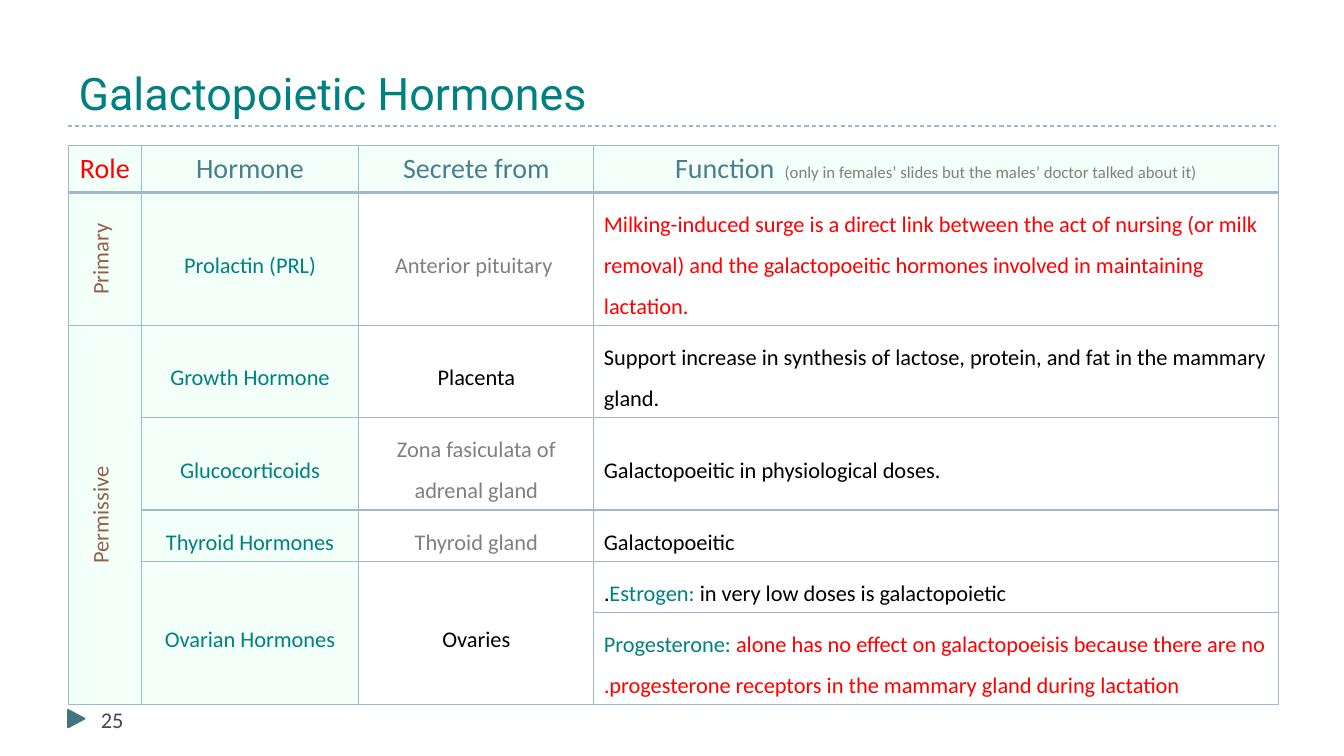
"""Build the slide on galactopoietic hormones: a title, a rule and a table."""
from dataclasses import dataclass
from typing import NamedTuple

from lxml import etree
from pptx import Presentation
from pptx.dml.color import RGBColor
from pptx.enum.dml import MSO_LINE
from pptx.enum.shapes import MSO_CONNECTOR, MSO_SHAPE
from pptx.enum.text import MSO_ANCHOR, PP_ALIGN
from pptx.oxml.ns import qn
from pptx.util import Emu, Inches, Pt

DASH = MSO_LINE.DASH
STRAIGHT = MSO_CONNECTOR.STRAIGHT
TRIANGLE = MSO_SHAPE.ISOSCELES_TRIANGLE
TOP, MIDDLE, BOTTOM = MSO_ANCHOR.TOP, MSO_ANCHOR.MIDDLE, MSO_ANCHOR.BOTTOM
LEFT, CENTER = PP_ALIGN.LEFT, PP_ALIGN.CENTER

TEAL = RGBColor(0x00, 0x80, 0x80)
RED = RGBColor(0xFF, 0x00, 0x00)
BLACK = RGBColor(0x00, 0x00, 0x00)
GRAY = RGBColor(0x80, 0x80, 0x80)
BROWN = RGBColor(0x95, 0x5E, 0x4B)
HEADING = RGBColor(0x49, 0x7E, 0x8D)
SLATE = RGBColor(0x46, 0x46, 0x53)
MARKER = RGBColor(0x42, 0x73, 0x80)
RULE = RGBColor(0x9F, 0xB8, 0xCD)
MINT = RGBColor(0xF3, 0xFF, 0xF9)
WHITE = RGBColor(0xFF, 0xFF, 0xFF)

BODY_FONT, TITLE_FONT = "Calibri", "Roboto"
SLIDE_WIDTH, SLIDE_HEIGHT = Inches(13.33), Inches(7.5)
GRID_COLUMNS, GRID_ROWS = 1333, 750
COLUMN_SPANS = (72, 216, 233, 679)
ROW_SPANS = (47, 132, 91, 92, 51, 51, 91)


class Box(NamedTuple):
    """A place on the slide, in grid columns and rows."""
    left: float
    top: float
    width: float
    height: float


class Span(NamedTuple):
    """A stretch of text in one colour; size 0 keeps the paragraph's size."""
    text: str
    color: RGBColor
    size: int = 0


@dataclass(frozen=True)
class Entry:
    """A table cell with its text, place and reach."""
    row: int
    column: int
    spans: tuple[Span, ...]
    rows: int = 1
    right_to_left: bool = False


ENTRIES = (
    Entry(0, 0, (Span("Role", RED),)),
    Entry(0, 1, (Span("Hormone", HEADING),)),
    Entry(0, 2, (Span("Secrete from", HEADING),)),
    Entry(0, 3, (Span("Function ", HEADING), Span(
        " (only in females’ slides but the males’ doctor talked about it)", GRAY, 12))),
    Entry(1, 0, (Span("Primary", BROWN),)),
    Entry(1, 1, (Span("Prolactin (PRL)", TEAL),)),
    Entry(1, 2, (Span("Anterior pituitary ", GRAY),)),
    Entry(1, 3, (Span(
        "Milking-induced surge is a direct link between the act of nursing (or milk removal) "
        "and the galactopoeitic hormones involved in maintaining lactation.", RED),)),
    Entry(2, 0, (Span("Permissive", BROWN),), rows=5),
    Entry(2, 1, (Span("Growth Hormone", TEAL),)),
    Entry(2, 2, (Span("Placenta", BLACK),)),
    Entry(2, 3, (Span("Support increase in synthesis of lactose, protein, and fat "
                      "in the mammary gland.", BLACK),)),
    Entry(3, 1, (Span("Glucocorticoids", TEAL),)),
    Entry(3, 2, (Span("Zona fasiculata of adrenal gland", GRAY),)),
    Entry(3, 3, (Span("Galactopoeitic in physiological doses.", BLACK),)),
    Entry(4, 1, (Span("Thyroid Hormones", TEAL),), right_to_left=True),
    Entry(4, 2, (Span("Thyroid gland", GRAY),)),
    Entry(4, 3, (Span("Galactopoeitic", BLACK),), right_to_left=True),
    Entry(5, 1, (Span("Ovarian Hormones", TEAL),), rows=2, right_to_left=True),
    Entry(5, 2, (Span("Ovaries", BLACK),), rows=2),
    Entry(5, 3, (Span("Estrogen:", TEAL), Span(" in very low doses is galactopoietic.", BLACK)),
          right_to_left=True),
    Entry(6, 3, (Span("Progesterone: ", TEAL), Span(
        "alone has no effect on galactopoeisis because there are no progesterone receptors "
        "in the mammary gland during lactation.", RED)), right_to_left=True),
)


def across(columns: float) -> Emu:
    """Turn grid columns into a length."""
    return Emu(round(SLIDE_WIDTH * columns / GRID_COLUMNS))


def down(rows: float) -> Emu:
    """Turn grid rows into a length."""
    return Emu(round(SLIDE_HEIGHT * rows / GRID_ROWS))


def place(box: Box) -> tuple[Emu, Emu, Emu, Emu]:
    """Turn a box into left, top, width and height."""
    return across(box.left), down(box.top), across(box.width), down(box.height)


def add_label(page, box: Box, text: str, font: str, size: int, color: RGBColor, anchor) -> None:
    """Write one line of text on the slide."""
    frame = page.shapes.add_textbox(*place(box)).text_frame
    frame.word_wrap = True
    frame.vertical_anchor = anchor
    frame.margin_left = frame.margin_right = across(11)
    frame.margin_top = frame.margin_bottom = down(6)
    para = frame.paragraphs[0]
    para.text = text
    para.font.name, para.font.size, para.font.color.rgb = font, Pt(size), color


def add_rule(page, left: float, right: float, top: float) -> None:
    """Draw the dashed rule under the title."""
    rule = page.shapes.add_connector(STRAIGHT, across(left), down(top), across(right), down(top))
    rule.line.color.rgb, rule.line.width, rule.line.dash_style = RULE, Pt(0.75), DASH
    etree.SubElement(rule._element.spPr, qn("a:effectLst"))


def add_marker(page, box: Box) -> None:
    """Draw the triangle beside the page number."""
    marker = page.shapes.add_shape(TRIANGLE, *place(box))
    marker.rotation = 90
    marker.shadow.inherit = False
    marker.fill.solid()
    marker.fill.fore_color.rgb = marker.line.color.rgb = MARKER
    marker.line.width = Pt(1.5)


def style_cell(cell, row: int, column: int) -> None:
    """Give a cell its fill and borders."""
    cell.fill.solid()
    cell.fill.fore_color.rgb = MINT if row == 0 or column < 2 else WHITE
    properties = cell._tc.get_or_add_tcPr()
    for index, side in enumerate(("lnL", "lnR", "lnT", "lnB")):
        width = Pt(2) if row == 0 and side == "lnB" else Pt(1)
        border = etree.Element(qn(f"a:{side}"), w=str(int(width)))
        fill = etree.SubElement(border, qn("a:solidFill"))
        etree.SubElement(fill, qn("a:srgbClr"), val=str(RULE))
        properties.insert(index, border)


def write_entry(table, entry: Entry) -> None:
    """Write an entry into its cell, merging rows where it reaches further."""
    cell = table.cell(entry.row, entry.column)
    if entry.rows > 1:
        cell.merge(table.cell(entry.row + entry.rows - 1, entry.column))
    cell.vertical_anchor = MIDDLE
    para = cell.text_frame.paragraphs[0]
    para.alignment = LEFT if entry.row and entry.column == 3 else CENTER
    para.font.name, para.font.size = BODY_FONT, Pt(16 if entry.row else 20)
    if entry.row:
        para.line_spacing = 1.5
        if entry.column == 0:
            cell._tc.get_or_add_tcPr().set("vert", "vert270")
    if entry.right_to_left:
        para._p.get_or_add_pPr().set("rtl", "1")
    for span in entry.spans:
        run = para.add_run()
        run.text = span.text
        run.font.color.rgb = span.color
        if span.size:
            run.font.size = Pt(span.size)


def add_hormone_table(page, left: float, top: float) -> None:
    """Draw the table of hormones."""
    box = Box(left, top, sum(COLUMN_SPANS), sum(ROW_SPANS))
    table = page.shapes.add_table(len(ROW_SPANS), len(COLUMN_SPANS), *place(box)).table
    table.first_row = table.horz_banding = False
    for column, width in zip(table.columns, COLUMN_SPANS):
        column.width = across(width)
    for row, height in zip(table.rows, ROW_SPANS):
        row.height = down(height)
    for row in range(len(ROW_SPANS)):
        for column in range(len(COLUMN_SPANS)):
            style_cell(table.cell(row, column), row, column)
    for entry in ENTRIES:
        write_entry(table, entry)


def main() -> None:
    """Build and save the deck."""
    deck = Presentation()
    deck.slide_width, deck.slide_height = SLIDE_WIDTH, SLIDE_HEIGHT
    page = deck.slides.add_slide(deck.slide_layouts[6])
    add_rule(page, 67, 1266, 125)
    add_label(page, Box(89, 695, 289, 40), "25", BODY_FONT, 16, SLATE, TOP)
    add_marker(page, Box(67, 705, 17, 16))
    add_label(page, Box(67, 17, 1200, 108), "Galactopoietic Hormones", TITLE_FONT, 32, TEAL, BOTTOM)
    add_hormone_table(page, 68, 144)
    deck.save("out.pptx")


if __name__ == "__main__":
    main()
